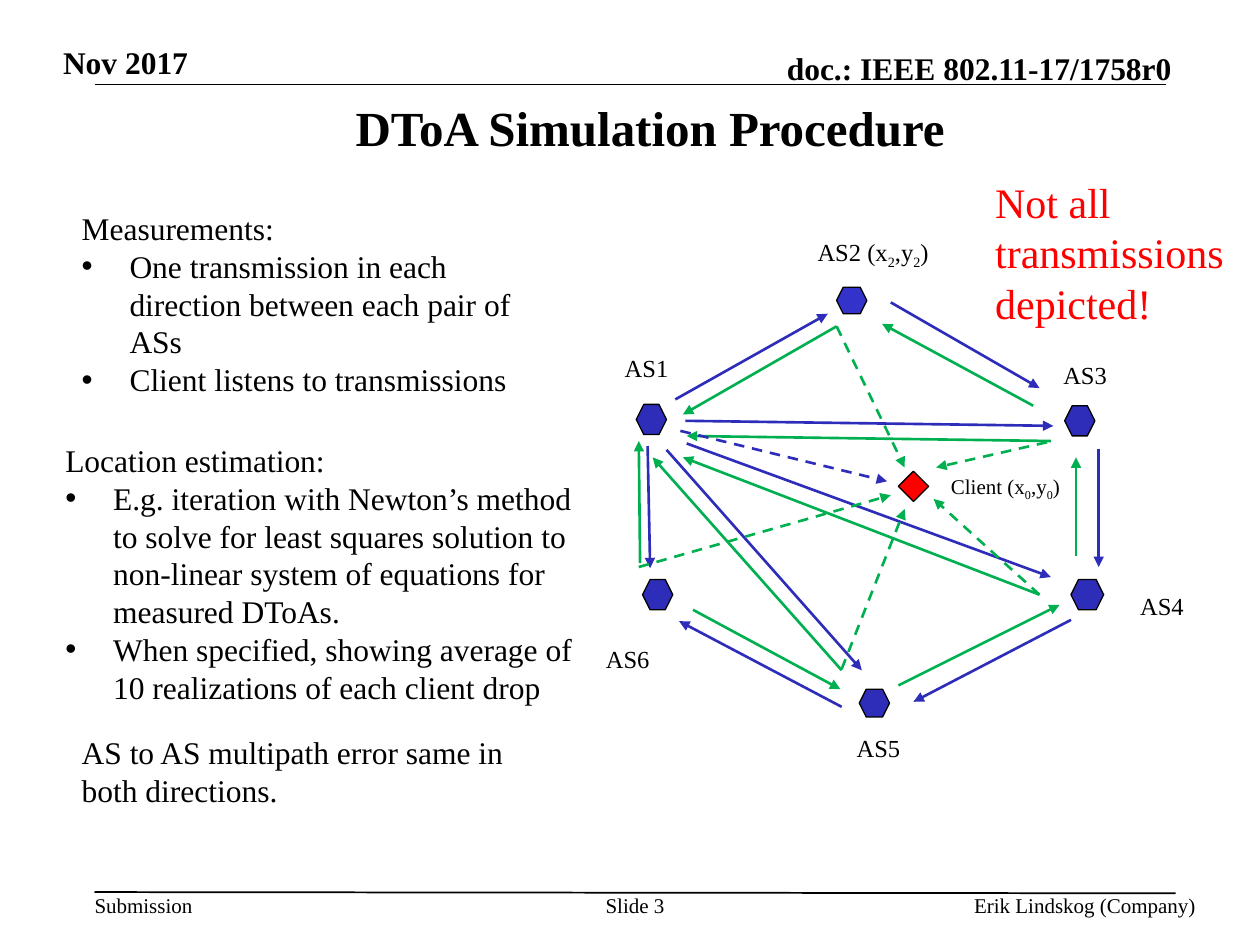
from dataclasses import dataclass

from lxml import etree
from pptx import Presentation
from pptx import util as u
from pptx.dml.color import RGBColor
from pptx.enum import dml, shapes, text
from pptx.oxml.ns import qn

# The slide is a grid of 100 columns by 75 rows of square cells.
CELL = u.Inches(0.1)
FONT = "Times New Roman"
BLACK, RED, BLUE, GREEN = "000000", "FF0000", "2D2DB9", "00B050"
LEFT, CENTER, RIGHT = text.PP_ALIGN.LEFT, text.PP_ALIGN.CENTER, text.PP_ALIGN.RIGHT
TOP, MIDDLE, BOTTOM = text.MSO_ANCHOR.TOP, text.MSO_ANCHOR.MIDDLE, text.MSO_ANCHOR.BOTTOM
HEXAGON, DIAMOND = shapes.MSO_SHAPE.HEXAGON, shapes.MSO_SHAPE.DIAMOND


@dataclass
class TextBlock:
    """Lines starting with "• " are bullets; "_" lowers the next character."""
    column: float
    row: float
    columns: float
    rows: float
    lines: tuple[str, ...]
    size: float = 18
    color: str = BLACK
    bold: bool = False
    align: text.PP_ALIGN = LEFT
    anchor: text.MSO_ANCHOR = TOP
    wrap: bool = True
    inset: bool = True


@dataclass
class Marker:
    column: float
    row: float
    columns: float = 2.4
    rows: float = 2.4
    color: str = BLUE
    kind: shapes.MSO_SHAPE = HEXAGON


@dataclass
class Arrow:
    start: tuple[float, float]
    end: tuple[float, float]
    color: str
    dashed: bool = False


def cells(*counts: float) -> list[int]:
    return [round(count * CELL) for count in counts]


def rgb(value: str) -> RGBColor:
    return RGBColor.from_string(value)


def add_bullet(paragraph) -> None:
    properties = paragraph._p.get_or_add_pPr()
    indent = u.Inches(0.38)
    properties.set("marL", str(indent))
    properties.set("indent", str(-indent))
    etree.SubElement(properties, qn("a:buFont")).set("typeface", "Arial")
    etree.SubElement(properties, qn("a:buChar")).set("char", "•")


def add_runs(paragraph, line: str) -> None:
    first, *rest = line.split("_")
    paragraph.add_run().text = first
    for part in rest:
        subscript = paragraph.add_run()
        subscript.text = part[0]
        subscript.font._element.set("baseline", "-25000")
        paragraph.add_run().text = part[1:]


def draw_text(slide, block: TextBlock) -> None:
    box = slide.shapes.add_textbox(*cells(block.column, block.row, block.columns, block.rows))
    frame = box.text_frame
    frame.word_wrap = block.wrap
    frame.vertical_anchor = block.anchor
    if not block.inset:
        frame.margin_left = frame.margin_right = frame.margin_top = frame.margin_bottom = 0
    for index, line in enumerate(block.lines):
        paragraph = frame.add_paragraph() if index else frame.paragraphs[0]
        paragraph.alignment = block.align
        if line.startswith("• "):
            add_bullet(paragraph)
        add_runs(paragraph, line.removeprefix("• "))
        paragraph.font.name = FONT
        paragraph.font.size = u.Pt(block.size)
        paragraph.font.bold = block.bold
        paragraph.font.color.rgb = rgb(block.color)


def draw_marker(slide, marker: Marker) -> None:
    shape = slide.shapes.add_shape(
        marker.kind, *cells(marker.column, marker.row, marker.columns, marker.rows))
    shape.shadow.inherit = False
    shape.fill.solid()
    shape.fill.fore_color.rgb = rgb(marker.color)
    shape.line.color.rgb = rgb(BLACK)
    shape.line.width = u.Pt(0.75)


def draw_line(slide, start: tuple, end: tuple, color: str, width: float):
    connector = slide.shapes.add_connector(
        shapes.MSO_CONNECTOR.STRAIGHT, *cells(*start, *end))
    connector.line.color.rgb = rgb(color)
    connector.line.width = u.Pt(width)
    etree.SubElement(connector._element.spPr, qn("a:effectLst"))
    return connector


def draw_arrow(slide, arrow: Arrow) -> None:
    line = draw_line(slide, arrow.start, arrow.end, arrow.color, 1.5).line
    if arrow.dashed:
        line.dash_style = dml.MSO_LINE.DASH
    etree.SubElement(line._get_or_add_ln(), qn("a:tailEnd")).set("type", "triangle")


def station_label(column: float, row: float, name: str, columns: float = 5.5) -> TextBlock:
    return TextBlock(column, row, columns, 3.4, (name,), size=14, wrap=False)


def footer(column: float, columns: float, line: str, align: text.PP_ALIGN) -> TextBlock:
    return TextBlock(column, 70.8, columns, 2, (line,), size=12, align=align,
                     wrap=align == RIGHT, inset=False)


RULES = [((7.5, 6.7), (92.5, 6.7)), ((7.5, 70.8), (93.3, 70.9))]

TEXTS = [
    # Header, title and footer
    TextBlock(5, 3.4, 20.5, 3, ("Nov 2017",), bold=True, anchor=BOTTOM, inset=False),
    TextBlock(54.7, 3.9, 38.3, 3, ("doc.: IEEE 802.11-17/1758r0",), bold=True,
              align=RIGHT, anchor=BOTTOM, inset=False),
    TextBlock(6.6, 7.3, 90, 5.5, ("DToA Simulation Procedure",), size=28, bold=True,
              align=CENTER, anchor=MIDDLE),
    footer(7.5, 7.8, "Submission", LEFT),
    footer(47.5, 5.8, "Slide 3", CENTER),
    footer(60.1, 34.8, "Erik Lindskog (Company)", RIGHT),
    # Procedure notes
    TextBlock(5.5, 16.1, 38.3, 19.2, (
        "Measurements:",
        "• One transmission in each direction between each pair of ASs",
        "• Client listens to transmissions")),
    TextBlock(4.2, 34.5, 44, 22.2, (
        "Location estimation:",
        "• E.g. iteration with Newton’s method to solve for least squares solution "
        "to non-linear system of equations for measured DToAs.",
        "• When specified, showing average of 10 realizations of each client drop")),
    TextBlock(5.5, 57.7, 38.3, 10.1, ("AS to AS multipath error same in both directions.",)),
    TextBlock(78, 13.5, 20.3, 13.4, ("Not all transmissions depicted!",), size=24, color=RED),
    # Diagram labels
    station_label(48.6, 27.5, "AS1"),
    station_label(63.9, 18.3, "AS2 (x_2,y_2)", 11),
    station_label(83.4, 28.1, "AS3"),
    station_label(89.5, 46.4, "AS4"),
    station_label(67, 57.7, "AS5"),
    station_label(47.1, 50.6, "AS6"),
    TextBlock(74.3, 37.1, 11, 3.1, ("Client (x_0,y_0)",), size=12, align=CENTER),
]

# Stations AS1 to AS6, then the client
MARKERS = [
    Marker(50.5, 32.1),
    Marker(66.4, 22.8, rows=2.1, color="3333CC"),
    Marker(84.5, 32.2),
    Marker(85, 46, columns=2.6),
    Marker(68.2, 54.7, rows=2.2),
    Marker(51, 46),
    Marker(71.3, 37.4, color=RED, kind=DIAMOND),
]

ARROWS = [
    # AS1 with AS2, AS3, AS4, AS5 and AS6
    Arrow((53.6, 31.7), (65.7, 24.9), BLUE), Arrow((66.4, 25.9), (54.2, 32.9), GREEN),
    Arrow((54.4, 33.4), (83.6, 33.8), BLUE), Arrow((83.4, 35), (54.5, 34.6), GREEN),
    Arrow((54.5, 35.2), (83.4, 45.8), BLUE), Arrow((82.5, 47.2), (54.2, 36.3), GREEN),
    Arrow((52.9, 35.7), (68.4, 53.2), BLUE), Arrow((66.8, 53.2), (51.8, 36.3), GREEN),
    Arrow((51.4, 35.4), (51.6, 45.1), BLUE), Arrow((50.8, 44.7), (50.7, 35), GREEN),
    # Neighbours around the ring
    Arrow((70.7, 24), (82.5, 30.8), BLUE), Arrow((82, 32.2), (70, 25.7), GREEN),
    Arrow((87.2, 35.6), (87.2, 45), BLUE), Arrow((85.4, 44.1), (85.4, 36.3), GREEN),
    Arrow((85, 49.2), (72.5, 55.7), BLUE), Arrow((71.3, 54.4), (84.1, 48), GREEN),
    Arrow((66.8, 56.1), (53.9, 49.3), BLUE), Arrow((55, 48.4), (66.7, 54.7), GREEN),
    # Transmissions heard by the client
    Arrow((54, 34.2), (70.4, 38.2), BLUE, True),
    Arrow((66.4, 25.9), (71.8, 37.1), GREEN, True),
    Arrow((83.1, 35.1), (74.3, 37.1), GREEN, True),
    Arrow((82.5, 47.2), (74.1, 39.6), GREEN, True),
    Arrow((66.8, 53.1), (71.8, 40.4), GREEN, True),
    Arrow((50.7, 45), (70.7, 39.3), GREEN, True),
]


def main() -> None:
    presentation = Presentation()
    presentation.slide_width, presentation.slide_height = cells(100, 75)
    slide = presentation.slides.add_slide(presentation.slide_layouts[6])
    for start, end in RULES:
        draw_line(slide, start, end, BLACK, 1)
    for marker in MARKERS:
        draw_marker(slide, marker)
    for arrow in ARROWS:
        draw_arrow(slide, arrow)
    for block in TEXTS:
        draw_text(slide, block)
    presentation.save("out.pptx")


if __name__ == "__main__":
    main()
